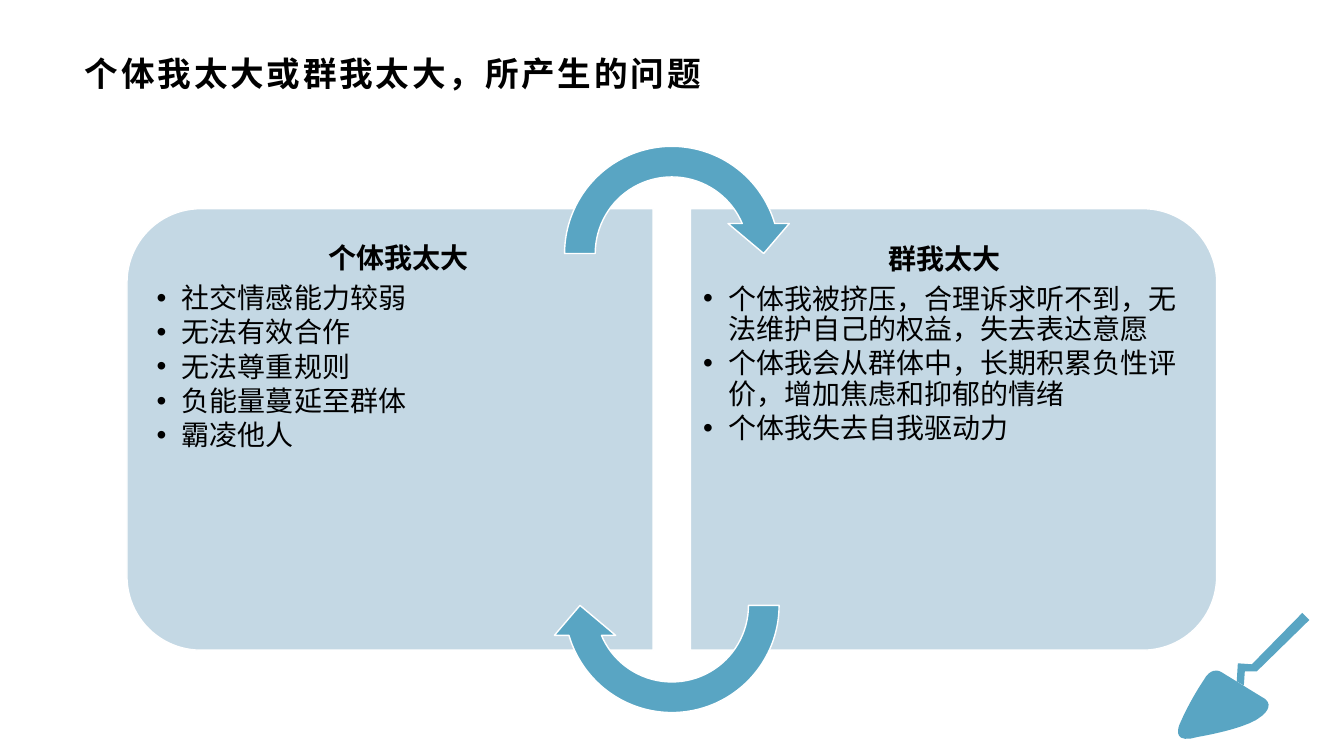
from dataclasses import dataclass

from lxml.etree import SubElement
from pptx import Presentation
from pptx.dml.color import RGBColor
from pptx.enum.shapes import MSO_SHAPE
from pptx.enum.text import MSO_ANCHOR, MSO_AUTO_SIZE, PP_ALIGN
from pptx.oxml.ns import qn
from pptx.shapes.base import BaseShape
from pptx.shapes.autoshape import Shape
from pptx.slide import Slide
from pptx.text.text import TextFrame
from pptx.util import Pt

COLOURS = {"text": "000000", "panel": "C4D8E4", "accent": "59A5C3", "edge": "FFFFFF"}
FONT = "Arial"
PANEL_SIZE = (315.36, 375.84)
LIST_SIZE = (360.5, 284.4)
ARROW_SIZE = 175
CURVE_STEPS = 10

Point = tuple[float, float]


@dataclass
class Side:
    heading: str
    problems: list[str]
    panel_left: float
    rotation: int
    list_left: float
    list_top: float
    inset_left: float
    inset_right: float


@dataclass
class CycleArrow:
    top: float
    rotation: int


@dataclass
class Curve:
    control: Point
    end: Point


SIDES = [
    Side("个体我太大",
         ["社交情感能力较弱", "无法有效合作", "无法尊重规则", "负能量蔓延至群体", "霸凌他人"],
         120.96, 270, 105.9, 164.2, 6, 9),
    Side("群我太大",
         ["个体我被挤压，合理诉求听不到，无法维护自己的权益，失去表达意愿",
          "个体我会从群体中，长期积累负性评价，增加焦虑和抑郁的情绪",
          "个体我失去自我驱动力"],
         523.44, 90, 493.2, 164.9, 9, 6),
]
CYCLE = [CycleArrow(93.6, 0), CycleArrow(344.9, 180)]

BLADE_START = (859.7, 486)
BLADE = [
    Curve((850.3, 499.7), (843.1, 516.2)),
    Curve((834.5, 532.8), (856.1, 526.3)),
    Curve((890.6, 520.6), (900.7, 511.9)),
    Curve((913, 503.3), (900.7, 497.5)),
    Curve((872.6, 480.2), (872.6, 480.2)),
    Curve((865.4, 475.2), BLADE_START),
]
HANDLE = [(883.4, 486.7), (884.2, 473.8), (894.2, 474.5), (930.2, 437.8),
          (935.3, 442.8), (897.8, 479.5), (889.2, 479.5), (888.5, 489.6)]


def colour(name: str) -> RGBColor:
    return RGBColor.from_string(COLOURS[name])


def paint(shape: Shape, fill: str, edged: bool = True) -> None:
    shape.shadow.inherit = False
    shape.fill.solid()
    shape.fill.fore_color.rgb = colour(fill)
    if edged:
        shape.line.color.rgb = colour("edge")
        shape.line.width = Pt(1)
    else:
        shape.line.fill.background()


def place(shape: BaseShape, left: float, top: float, width: float, height: float) -> None:
    shape.left, shape.top = Pt(left), Pt(top)
    shape.width, shape.height = Pt(width), Pt(height)


def set_frame(frame: TextFrame, left: float, top: float, right: float, bottom: float) -> None:
    frame.word_wrap = True
    frame.auto_size = MSO_AUTO_SIZE.NONE
    frame.margin_left, frame.margin_top = Pt(left), Pt(top)
    frame.margin_right, frame.margin_bottom = Pt(right), Pt(bottom)


def trace_curves(start: Point, curves: list[Curve]) -> list[Point]:
    points = [start]
    for curve in curves:
        origin = points[-1]
        for step in range(1, CURVE_STEPS + 1):
            t = step / CURVE_STEPS
            weights = ((1 - t) ** 3 + 3 * t * (1 - t) ** 2, 3 * t * t * (1 - t), t ** 3)
            corners = (origin, curve.control, curve.end)
            points.append((sum(w * c[0] for w, c in zip(weights, corners)),
                           sum(w * c[1] for w, c in zip(weights, corners))))
    return points


def draw_outline(slide: Slide, points: list[Point]) -> None:
    vertices = [(Pt(x), Pt(y)) for x, y in points]
    builder = slide.shapes.build_freeform(*vertices[0])
    builder.add_line_segments(vertices[1:], close=True)
    paint(builder.convert_to_shape(), "accent", edged=False)


def write_title(slide: Slide, wording: str) -> None:
    title = slide.shapes.title
    place(title, 52.6, 34.6, 854.6, 34.6)
    set_frame(title.text_frame, 8, 3, 6, 3)
    title.text_frame.vertical_anchor = MSO_ANCHOR.MIDDLE
    paragraph = title.text_frame.paragraphs[0]
    paragraph.alignment = PP_ALIGN.LEFT
    run = paragraph.add_run()
    run.text = wording
    run.font.name, run.font.size, run.font.bold = FONT, Pt(24), True
    run.font.color.rgb = colour("text")
    run.font._element.set("spc", "200")


def write_line(frame: TextFrame, wording: str, is_heading: bool) -> None:
    paragraph = frame.paragraphs[0] if is_heading else frame.add_paragraph()
    paragraph.level = 0 if is_heading else 1
    paragraph.alignment = PP_ALIGN.CENTER if is_heading else PP_ALIGN.LEFT
    paragraph.line_spacing = 0.9
    paragraph.space_before = Pt(0)
    paragraph.space_after = Pt(7 if is_heading else 3)
    properties = paragraph._p.get_or_add_pPr()
    indent = 0 if is_heading else Pt(18)
    properties.set("marL", str(indent))
    properties.set("indent", str(-indent))
    if is_heading:
        SubElement(properties, qn("a:buNone"))
    else:
        SubElement(properties, qn("a:buFont"), typeface=FONT)
        SubElement(properties, qn("a:buChar"), char="•")
    run = paragraph.add_run()
    run.text = wording
    run.font.name, run.font.size, run.font.bold = FONT, Pt(20), is_heading
    run.font.color.rgb = colour("text")


def draw_side(slide: Slide, side: Side, problem_list: BaseShape) -> None:
    panel = slide.shapes.add_shape(MSO_SHAPE.ROUND_2_SAME_RECTANGLE, 0, 0, 0, 0)
    place(panel, side.panel_left, 118.8, *PANEL_SIZE)
    panel.rotation = side.rotation
    panel.adjustments[0], panel.adjustments[1] = 0.167, 0
    paint(panel, "panel")
    place(problem_list, side.list_left, side.list_top, *LIST_SIZE)
    frame = problem_list.text_frame
    set_frame(frame, side.inset_left, 10, side.inset_right, 10)
    frame.vertical_anchor = MSO_ANCHOR.TOP
    write_line(frame, side.heading, True)
    for problem in side.problems:
        write_line(frame, problem, False)
    panel.element.addnext(problem_list.element)


def draw_arrow(slide: Slide, cycle_arrow: CycleArrow) -> None:
    arrow = slide.shapes.add_shape(MSO_SHAPE.CIRCULAR_ARROW, 0, 0, 0, 0)
    place(arrow, 392.4, cycle_arrow.top, ARROW_SIZE, ARROW_SIZE)
    arrow.rotation = cycle_arrow.rotation
    for index, value in enumerate((0.125, 11.42, 204.58, 108, 0.125)):
        arrow.adjustments[index] = value
    paint(arrow, "accent")


def main() -> None:
    deck = Presentation()
    deck.slide_width, deck.slide_height = Pt(960), Pt(540)
    slide = deck.slides.add_slide(deck.slide_layouts[3])
    problem_lists = [slide.placeholders[1], slide.placeholders[2]]
    draw_outline(slide, trace_curves(BLADE_START, BLADE))
    draw_outline(slide, HANDLE)
    write_title(slide, "个体我太大或群我太大，所产生的问题")
    for side, problem_list in zip(SIDES, problem_lists):
        draw_side(slide, side, problem_list)
    for cycle_arrow in CYCLE:
        draw_arrow(slide, cycle_arrow)
    deck.save("out.pptx")


if __name__ == "__main__":
    main()
